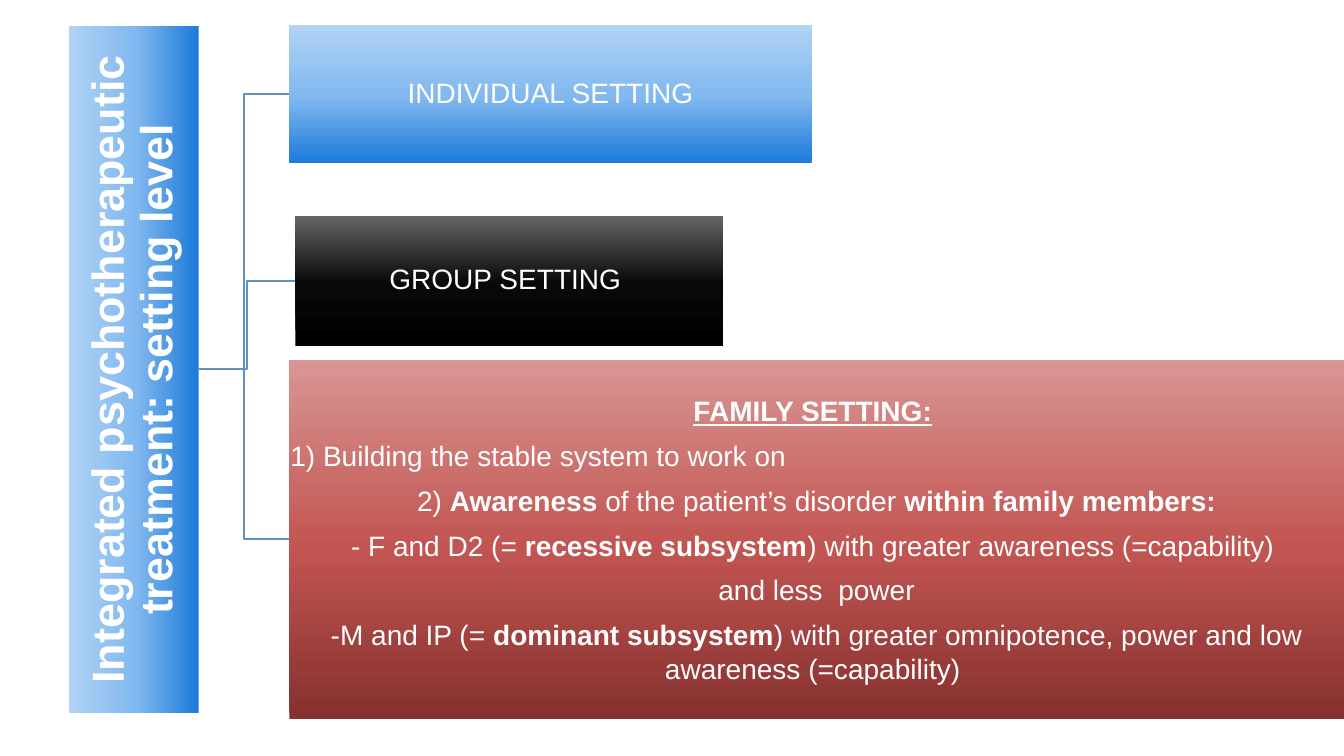
from copy import deepcopy
from lxml import etree
from pptx import Presentation
from pptx.dml.color import RGBColor
from pptx.enum.shapes import MSO_CONNECTOR, MSO_SHAPE
from pptx.enum.text import MSO_ANCHOR, PP_ALIGN
from pptx.oxml.ns import qn
from pptx.util import Inches, Pt

# Content: a paragraph is (alignment, [(text, style)]), b = bold, u = underlined
CENTER, LEFT = PP_ALIGN.CENTER, PP_ALIGN.LEFT
BLUE = ("1B7AD9", "81B8EF", "B1D3F5")
BLACK = ("000000", "080808", "666666")
RED = ("85312F", "C25552", "D99694")
STOPS = (0, 0.48, 1)
WHITE, LINE = "FFFFFF", "6492BF"

TREATMENT = [(CENTER, [("Integrated psychotherapeutic treatment: setting level", "b")])]
INDIVIDUAL = [(CENTER, [("INDIVIDUAL SETTING", "")])]
GROUP = [(CENTER, [("GROUP SETTING ", "")])]
FAMILY = [
    (CENTER, [("FAMILY SETTING:", "bu"), (" ", "b")]),
    (LEFT, [("1) Building the stable system to work on", "")]),
    (CENTER, [("2) ", ""), ("Awareness", "b"), (" of the patient’s disorder ", ""),
              ("within family members:", "b")]),
    (CENTER, [("- F and D2 (= ", ""), ("recessive subsystem", "b"),
              (") with greater awareness (=capability) ", "")]),
    (CENTER, [("and less  power", "")]),
    (CENTER, [("-M and IP (= ", ""), ("dominant subsystem", "b"),
              (") with greater omnipotence, power and low awareness (=capability) ", "")]),
]

# Layout in inches: the settings hang to the right of the treatment bar
WIDTH, HEIGHT = 13.33, 7.5
BRANCH_LEFT = 2.87
TREATMENT_BOX = (0.68, 0.26, 1.29, 6.81)
SETTINGS = [  # paragraphs, box, gradient, line spacing
    (INDIVIDUAL, (BRANCH_LEFT, 0.25, 5.18, 1.37), BLUE, 0.9),
    (GROUP, (BRANCH_LEFT + 0.06, 2.14, 4.24, 1.29), BLACK, 0.9),
    (FAMILY, (BRANCH_LEFT, 3.57, WIDTH - BRANCH_LEFT, 3.56), RED, 1.0),
]


def color(hex_code):
    return RGBColor.from_string(hex_code)


def paint(box, shades, angle):
    """Three-stop gradient running from the first shade towards the angle."""
    box.fill.gradient()
    box.fill.gradient_angle = angle
    stop_list = box.element.spPr.find(qn("a:gradFill")).find(qn("a:gsLst"))
    stop_list.append(deepcopy(stop_list[0]))
    for stop, position, shade in zip(box.fill.gradient_stops, STOPS, shades):
        stop.position = position
        stop.color.rgb = color(shade)


def add_box(slide, paragraphs, place, shades, spacing, size=20, angle=90, inset=0.01):
    box = slide.shapes.add_shape(MSO_SHAPE.RECTANGLE, *map(Inches, place))
    box.shadow.inherit = False
    box.line.fill.background()
    paint(box, shades, angle)
    frame = box.text_frame
    frame.word_wrap = True
    frame.vertical_anchor = MSO_ANCHOR.MIDDLE
    frame.margin_left = frame.margin_right = Inches(inset)
    frame.margin_top = frame.margin_bottom = Inches(inset)
    for number, (alignment, pieces) in enumerate(paragraphs):
        paragraph = frame.add_paragraph() if number else frame.paragraphs[0]
        paragraph.alignment = alignment
        paragraph.line_spacing = spacing
        paragraph.space_after = Pt(size * 0.4)
        for text, style in pieces:
            run = paragraph.add_run()
            run.text = text
            run.font.name, run.font.size = "Arial", Pt(size)
            run.font.bold, run.font.underline = "b" in style, "u" in style
            run.font.color.rgb = color(WHITE)
    return box


def add_branch(slide, parent, child):
    branch = slide.shapes.add_connector(MSO_CONNECTOR.ELBOW, 0, 0, 0, 0)
    branch.begin_connect(parent, 3)
    branch.end_connect(child, 1)
    branch.line.color.rgb = color(LINE)
    branch.line.width = Pt(1.5)
    etree.SubElement(branch.element.spPr, qn("a:effectLst"))


def main():
    deck = Presentation()
    deck.slide_width, deck.slide_height = Inches(WIDTH), Inches(HEIGHT)
    slide = deck.slides.add_slide(deck.slide_layouts[6])

    # Treatment bar, read from bottom to top
    treatment = add_box(slide, TREATMENT, TREATMENT_BOX, BLUE, 0.9,
                        size=32, angle=180, inset=0.02)
    treatment.text_frame._txBody.bodyPr.set("vert", "vert270")

    # Settings and their branches
    for paragraphs, place, shades, spacing in SETTINGS:
        setting = add_box(slide, paragraphs, place, shades, spacing)
        add_branch(slide, treatment, setting)

    deck.save("out.pptx")


if __name__ == "__main__":
    main()
